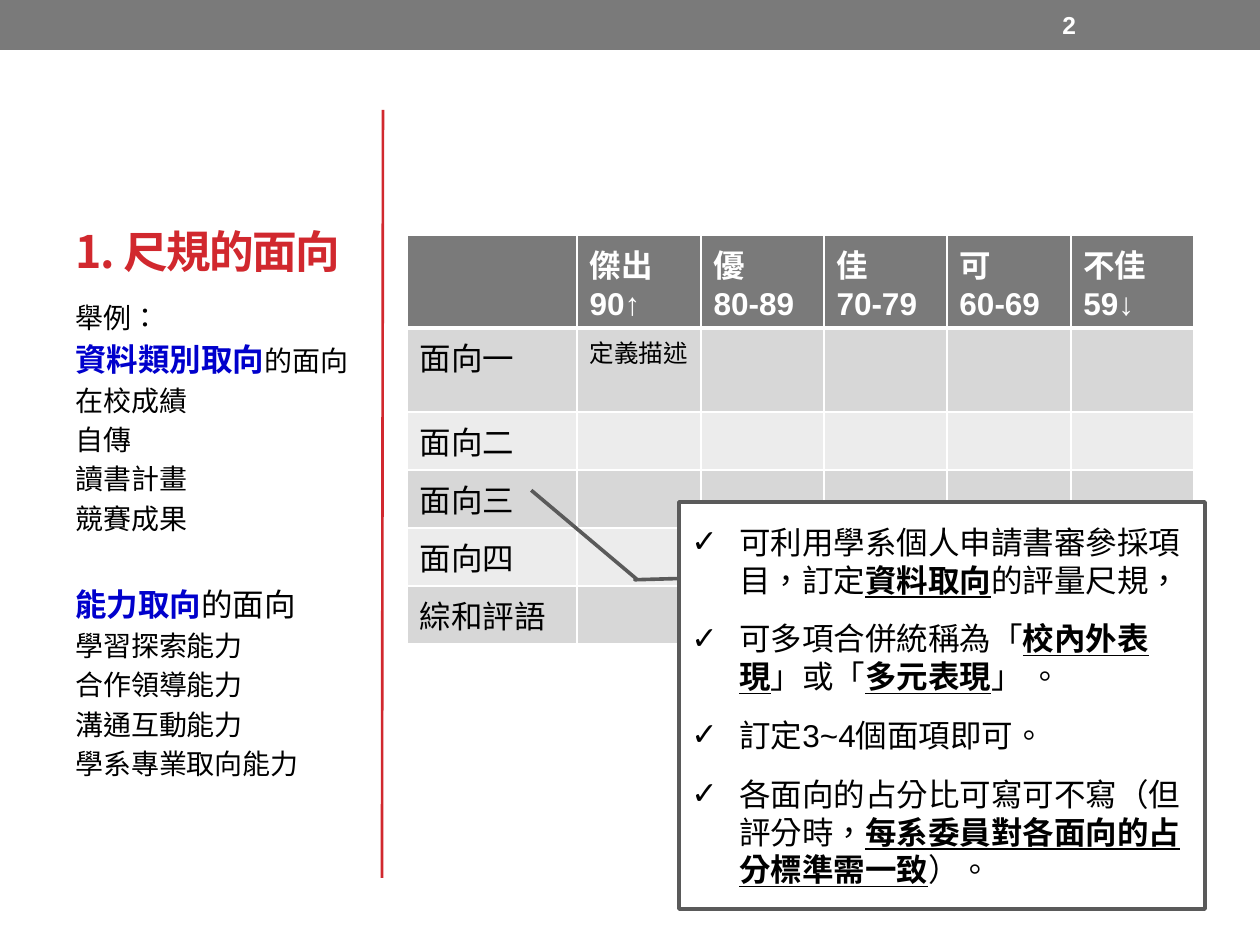
"""Build the slide on the aspects of a grading rubric."""
import pptx
import pptx.dml.color
import pptx.enum.shapes
import pptx.enum.text
import pptx.oxml
import pptx.oxml.ns
import pptx.util
from lxml import etree

LATIN, CJK = "Arial", "Noto Sans CJK SC"
BLACK, WHITE, GREY, RED, BLUE = "000000", "FFFFFF", "7A7A7A", "D1282E", "0000CC"
BANDS = ("D7D7D7", "ECECEC")

TITLE = "1. 尺規的面向"
PAGE = "2"
ASPECT_GROUPS = [
    ("舉例：", None, 0, []),
    ("資料類別取向", 16, 3.6, ["在校成績", "自傳", "讀書計畫", "競賽成果"]),
    ("能力取向", 18, 29, ["學習探索能力", "合作領導能力", "溝通互動能力", "學系專業取向能力"]),
]
GRADES = [("傑出", "90↑"), ("優", "80-89"), ("佳", "70-79"), ("可", "60-69"), ("不佳", "59↓")]
ASPECTS = ["面向一", "面向二", "面向三", "面向四", "綜和評語"]
DEFINITION = "定義描述"
COLUMN_WIDTHS = [170, 124, 123, 123, 124, 123]
ROW_HEIGHTS = [93, 84, 58, 58, 58, 58]
NOTES = [
    ["可利用學系個人申請書審參採項目，訂定", "資料取向", "的評量尺規，"],
    ["可多項合併統稱為「", "校內外表現", "」或「", "多元表現", "」 。"],
    ["訂定3~4個面項即可。"],
    ["各面向的占分比可寫可不寫（但評分時，", "每系委員對各面向的占分標準需一致", "）。"],
]
CALLOUT_POINTS = [0.188, 0, 0.191, -0.084, 0.189, -0.081, -0.029, -0.281]


def px(length):
    return pptx.util.Emu(round(length * 914400 / 126))


def rgb(code):
    return pptx.dml.color.RGBColor.from_string(code)


def sub(parent, tag, **attributes):
    return etree.SubElement(parent, pptx.oxml.ns.qn(tag), **attributes)


def add_run(paragraph, text, size, color=BLACK, bold=False, underline=False, latin=LATIN):
    run = paragraph.add_run()
    run.text = text
    font = run.font
    font.size, font.bold, font.underline = pptx.util.Pt(size), bold, underline
    font.name, font.color.rgb = latin, rgb(color)
    properties = run._r.get_or_add_rPr()
    properties.set("lang", "zh-TW")
    sub(properties, "a:ea", typeface=CJK)
    return properties


def next_paragraph(frame, space=0):
    first = frame.paragraphs[0]
    if not first.runs:
        return first
    paragraph = frame.add_paragraph()
    paragraph.space_before = pptx.util.Pt(space)
    return paragraph


def add_text_frame(slide, box, anchor):
    frame = slide.shapes.add_textbox(*map(px, box)).text_frame
    frame.word_wrap = True
    frame.vertical_anchor = anchor
    return frame


def add_frame_parts(slide):
    band = slide.shapes.add_shape(
        pptx.enum.shapes.MSO_SHAPE.RECTANGLE, 0, 0, px(1260), px(50))
    band.shadow.inherit = False
    band.fill.solid()
    band.fill.fore_color.rgb = rgb(GREY)
    band.line.fill.background()
    divider = slide.shapes.add_connector(
        pptx.enum.shapes.MSO_CONNECTOR.STRAIGHT, px(383), px(110), px(382), px(878))
    divider.line.color.rgb = rgb(RED)
    divider.line.width = pptx.util.Pt(1.5)
    sub(divider._element.spPr, "a:effectLst")


def add_outline(slide):
    anchors = pptx.enum.text.MSO_ANCHOR
    title = add_text_frame(slide, (63, 110, 295, 174), anchors.BOTTOM)
    add_run(next_paragraph(title), TITLE, 25.5, RED, True, latin=CJK).set("spc", "-100")
    page = add_text_frame(slide, (1050, 2, 147, 45), anchors.MIDDLE)
    add_run(next_paragraph(page), PAGE, 14, WHITE, True)

    body = add_text_frame(slide, (63, 294, 309, 584), anchors.TOP)
    for heading, suffix_size, space, items in ASPECT_GROUPS:
        paragraph = next_paragraph(body, space)
        if suffix_size:
            add_run(paragraph, heading, 18, BLUE, True)
            add_run(paragraph, "的面向", suffix_size)
        else:
            add_run(paragraph, heading, 16)
        for item in items:
            add_run(next_paragraph(body, 3.2), item, 16)


def style_cell(cell, fill, top, bottom):
    properties = cell._tc.get_or_add_tcPr()
    for side, width in (("L", 1), ("R", 1), ("T", top), ("B", bottom)):
        border = sub(properties, "a:ln" + side, w=str(pptx.util.Pt(width)))
        sub(sub(border, "a:solidFill"), "a:srgbClr", val=WHITE)
    cell.fill.solid()
    cell.fill.fore_color.rgb = rgb(fill)


def add_rubric(slide):
    rubric = slide.shapes.add_table(
        len(ROW_HEIGHTS), len(COLUMN_WIDTHS), px(407), px(235),
        px(sum(COLUMN_WIDTHS)), px(sum(ROW_HEIGHTS))).table
    for column, width in zip(rubric.columns, COLUMN_WIDTHS):
        column.width = px(width)
    for row_index, (row, height) in enumerate(zip(rubric.rows, ROW_HEIGHTS)):
        row.height = px(height)
        fill = BANDS[(row_index - 1) % 2] if row_index else GREY
        for cell in row.cells:
            style_cell(cell, fill, 3 if row_index == 1 else 1, 1 if row_index else 3)
    for column, grade in enumerate(GRADES, 1):
        for line in grade:
            add_run(next_paragraph(rubric.cell(0, column).text_frame), line, 18, WHITE, True)
    for row_index, aspect in enumerate(ASPECTS, 1):
        add_run(next_paragraph(rubric.cell(row_index, 0).text_frame), aspect, 18)
    add_run(next_paragraph(rubric.cell(1, 1).text_frame), DEFINITION, 14)


def add_notes_callout(slide):
    callout = slide.shapes.add_shape(
        pptx.enum.shapes.MSO_SHAPE.LINE_CALLOUT_3, px(679), px(502), px(526), px(407))
    callout.shadow.inherit = False
    for index, value in enumerate(CALLOUT_POINTS):
        callout.adjustments[index] = value
    callout.fill.solid()
    callout.fill.fore_color.rgb = rgb(WHITE)
    callout.line.color.rgb = rgb("5A5A5A")
    callout.line.width = pptx.util.Pt(2.08)
    frame = callout.text_frame
    frame.word_wrap = True
    frame.vertical_anchor = pptx.enum.text.MSO_ANCHOR.MIDDLE
    for note in NOTES:
        paragraph = next_paragraph(frame, 12)
        paragraph.alignment = pptx.enum.text.PP_ALIGN.LEFT
        properties = paragraph._p.get_or_add_pPr()
        properties.set("marL", str(px(48)))
        properties.set("indent", str(px(-48)))
        sub(properties, "a:buFont", typeface=LATIN)
        sub(properties, "a:buChar", char="✓")
        for index, piece in enumerate(note):
            emphasis = index % 2 == 1
            add_run(paragraph, piece, 18, bold=emphasis, underline=emphasis)


def main():
    deck = pptx.Presentation()
    deck.slide_width, deck.slide_height = px(1260), px(945)
    slide = deck.slides.add_slide(deck.slide_layouts[6])
    add_frame_parts(slide)
    add_outline(slide)
    add_rubric(slide)
    add_notes_callout(slide)
    deck.save("out.pptx")


if __name__ == "__main__":
    main()
